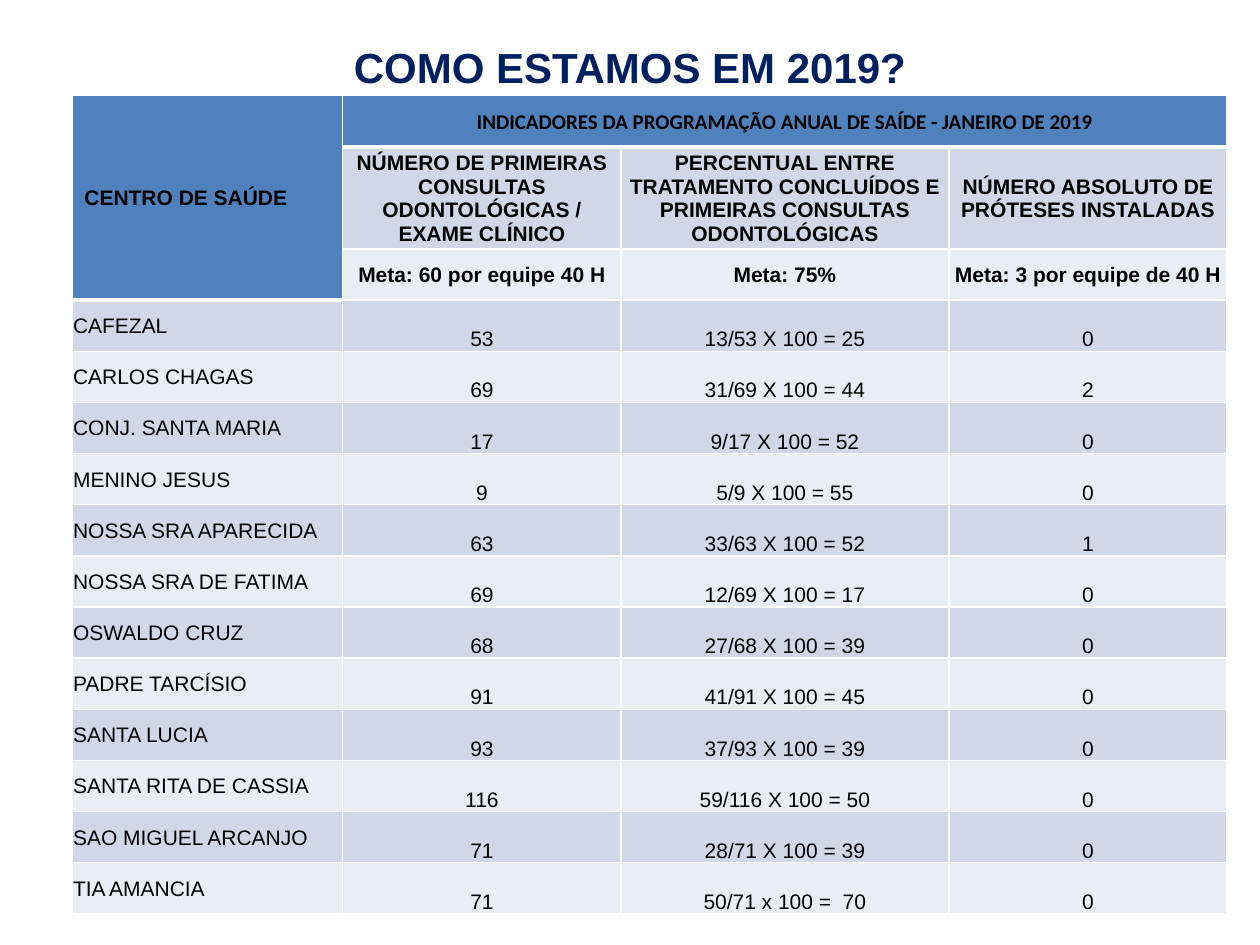
import lxml.etree
import pptx
import pptx.dml.color
import pptx.enum.text
import pptx.oxml.ns
import pptx.util

Inches = pptx.util.Inches
Pt = pptx.util.Pt
RGBColor = pptx.dml.color.RGBColor
ANCHOR = pptx.enum.text.MSO_ANCHOR
ALIGN = pptx.enum.text.PP_ALIGN
qn = pptx.oxml.ns.qn

COLORS = {
    "title": "002060",
    "text": "000000",
    "header": "4F81BD",
    "band_dark": "D0D8E8",
    "band_light": "E9EDF4",
    "border": "FFFFFF",
}
HEADER_ROWS = 3
COLUMN_WIDTHS = [2.15, 2.21, 2.6, 2.21]
ROW_HEIGHT = 0.406
TALL_ROW_HEIGHT = 0.81

ROWS = [
    ["CENTRO DE SAÚDE", "INDICADORES DA PROGRAMAÇÃO ANUAL DE SAÍDE - JANEIRO DE 2019", "", ""],
    ["", "NÚMERO DE PRIMEIRAS CONSULTAS ODONTOLÓGICAS / EXAME CLÍNICO",
     "PERCENTUAL ENTRE TRATAMENTO CONCLUÍDOS E PRIMEIRAS CONSULTAS ODONTOLÓGICAS",
     "NÚMERO ABSOLUTO DE PRÓTESES INSTALADAS"],
    ["", "Meta: 60 por equipe 40 H", "Meta: 75%", "Meta: 3 por equipe de 40 H"],
    ["CAFEZAL", "53", "13/53 X 100 = 25", "0"],
    ["CARLOS CHAGAS", "69", "31/69 X 100 = 44", "2"],
    ["CONJ. SANTA MARIA", "17", "9/17 X 100 = 52", "0"],
    ["MENINO JESUS", "9", "5/9 X 100 = 55", "0"],
    ["NOSSA SRA APARECIDA", "63", "33/63 X 100 = 52", "1"],
    ["NOSSA SRA DE FATIMA", "69", "12/69 X 100 = 17", "0"],
    ["OSWALDO CRUZ", "68", "27/68 X 100 = 39", "0"],
    ["PADRE TARCÍSIO", "91", "41/91 X 100 = 45", "0"],
    ["SANTA LUCIA", "93", "37/93 X 100 = 39", "0"],
    ["SANTA RITA DE CASSIA", "116", "59/116 X 100 = 50", "0"],
    ["SAO MIGUEL ARCANJO", "71", "28/71 X 100 = 39", "0"],
    ["TIA AMANCIA", "71", "50/71 x 100 =  70", "0"],
]


def style_paragraph(paragraph, size, color, bold, alignment, font="Arial"):
    paragraph.alignment = alignment
    paragraph.font.size = Pt(size)
    paragraph.font.name = font
    paragraph.font.bold = bold
    paragraph.font.color.rgb = RGBColor.from_string(COLORS[color])


def add_borders(cell, bottom_width):
    """Draw white lines of 1 pt on three sides; call before setting the fill."""
    properties = cell._tc.get_or_add_tcPr()
    for side, width in (("L", 1), ("R", 1), ("T", 1), ("B", bottom_width)):
        line = lxml.etree.SubElement(properties, qn(f"a:ln{side}"), w=str(Pt(width)))
        fill = lxml.etree.SubElement(line, qn("a:solidFill"))
        lxml.etree.SubElement(fill, qn("a:srgbClr"), val=COLORS["border"])


presentation = pptx.Presentation()
presentation.slide_width = Inches(10)
presentation.slide_height = Inches(7.5)
slide = presentation.slides.add_slide(presentation.slide_layouts[6])

title = slide.shapes.add_textbox(Inches(0.5), Inches(0.3), Inches(9), Inches(0.46))
title.text_frame.word_wrap = True
title.text_frame.vertical_anchor = ANCHOR.MIDDLE
title.text_frame.text = "COMO ESTAMOS EM 2019?"
style_paragraph(title.text_frame.paragraphs[0], 24, "title", True, ALIGN.CENTER)

table = slide.shapes.add_table(
    len(ROWS), len(COLUMN_WIDTHS), Inches(0.57), Inches(0.76), Inches(9.16), Inches(6.49)
).table
for column, width in zip(table.columns, COLUMN_WIDTHS):
    column.width = Inches(width)
for row in table.rows:
    row.height = Inches(ROW_HEIGHT)
table.rows[1].height = Inches(TALL_ROW_HEIGHT)
table.cell(0, 0).merge(table.cell(HEADER_ROWS - 1, 0))
table.cell(0, 1).merge(table.cell(0, 3))

for row_index, values in enumerate(ROWS):
    for column_index, value in enumerate(values):
        cell = table.cell(row_index, column_index)
        in_header = row_index < HEADER_ROWS
        is_name = column_index == 0
        is_heading = row_index == 0 or (in_header and is_name)

        add_borders(cell, 3 if is_heading else 1)
        band = "band_dark" if row_index % 2 else "band_light"
        cell.fill.solid()
        cell.fill.fore_color.rgb = RGBColor.from_string(COLORS["header" if is_heading else band])
        if cell.is_spanned:
            continue

        if is_heading and is_name:
            cell.margin_left = cell.margin_right = Inches(0.1)
            cell.margin_top = cell.margin_bottom = Inches(0.05)
        else:
            cell.margin_left = cell.margin_right = cell.margin_top = Inches(0.01)
            cell.margin_bottom = 0
        cell.vertical_anchor = ANCHOR.MIDDLE if in_header or is_name else ANCHOR.BOTTOM
        cell.text = value
        style_paragraph(
            cell.text_frame.paragraphs[0], 12, "text", in_header,
            ALIGN.LEFT if is_name else ALIGN.CENTER,
            "Calibri" if is_heading and not is_name else "Arial",
        )

presentation.save("out.pptx")
